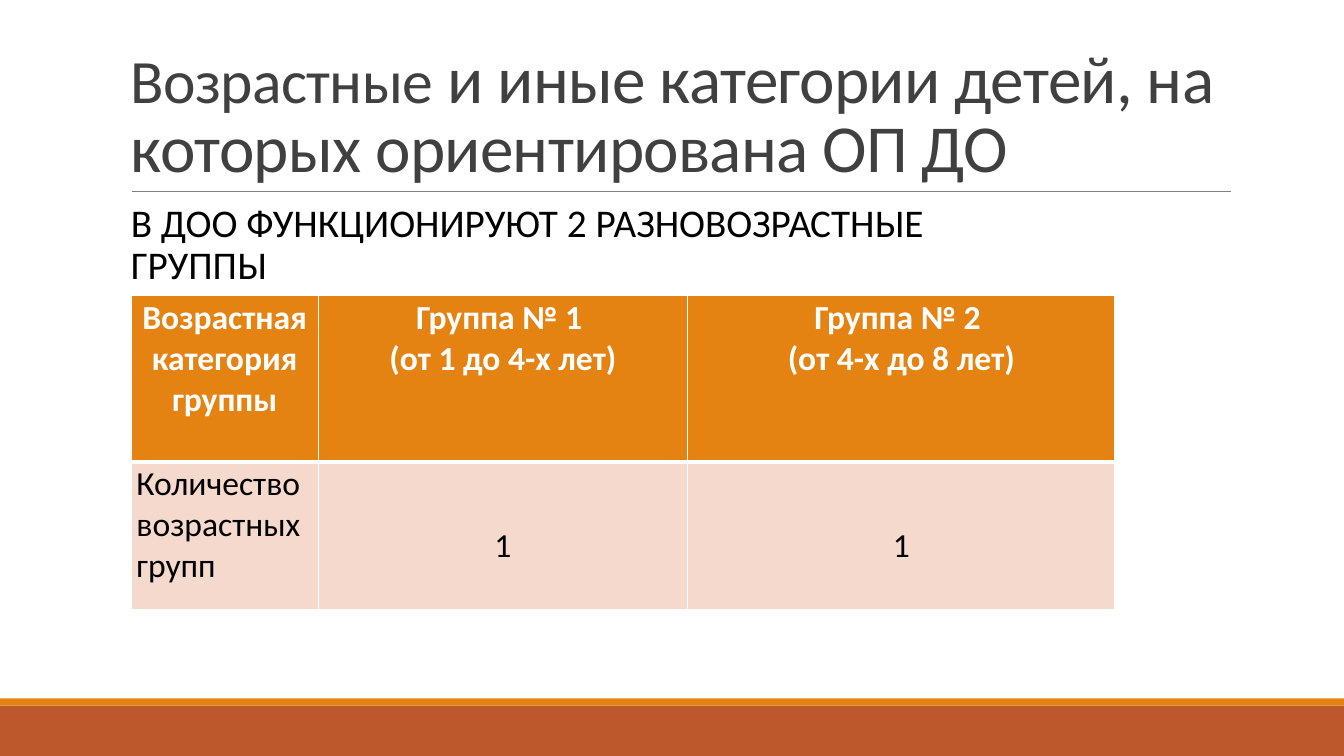
from lxml import etree
from pptx import Presentation
from pptx import util as u
from pptx.dml.color import RGBColor
from pptx.enum import shapes, text
from pptx.oxml.ns import qn

PX = 9525  # 96 px to the inch
COLORS = {"rust": "BD582C", "orange": "E48312", "gray": "808080", "title": "404040",
          "black": "000000", "white": "FFFFFF", "peach": "F5D9CC"}


def box(*lengths):
    return [n * PX for n in lengths]


def add_run(p, words, size, color, bold=False):
    r = p.add_run()
    r.text = words
    for name, value in {"name": "Calibri", "size": u.Pt(size), "bold": bold}.items():
        setattr(r.font, name, value)
    r.font.color.rgb = RGBColor.from_string(COLORS[color])
    return r


prs = Presentation()
prs.slide_width, prs.slide_height = box(1280, 720)
s = prs.slides.add_slide(prs.slide_layouts[1])

# Footer bands and title rule
for color, top, height in (("rust", 672, 48), ("orange", 665, 7)):
    sp = s.shapes.add_shape(shapes.MSO_SHAPE.RECTANGLE, *box(0, top, 1280, height))
    sp.shadow.inherit = False
    sp.fill.solid()
    sp.fill.fore_color.rgb = RGBColor.from_string(COLORS[color])
    sp.line.fill.background()
rule = s.shapes.add_connector(shapes.MSO_CONNECTOR.STRAIGHT, *box(126, 182, 1172, 182))
rule.line.color.rgb = RGBColor.from_string(COLORS["gray"])
rule.line.width = u.Pt(0.5)
etree.SubElement(rule._element.spPr, qn("a:effectLst"))

# Title and lead line
title, body = s.placeholders
for sp, place, anchor, spacing in (
        (title, (115, 30, 1056, 152), text.MSO_ANCHOR.BOTTOM, 0.85),
        (body, (115, 206, 878, 56), text.MSO_ANCHOR.MIDDLE, 0.9)):
    sp.left, sp.top, sp.width, sp.height = box(*place)
    tf = sp.text_frame
    for name, value in {"vertical_anchor": anchor, "word_wrap": True,
                        "auto_size": text.MSO_AUTO_SIZE.NONE}.items():
        setattr(tf, name, value)
    tf.paragraphs[0].alignment = text.PP_ALIGN.LEFT
    tf.paragraphs[0].line_spacing = spacing

p = title.text_frame.paragraphs[0]
for words, size in (("Возрастные", 44),
                    (" и иные категории детей, на которых ориентирована ОП ДО", 48)):
    r = add_run(p, words, size, "title")
    r._r.get_or_add_rPr().set("spc", "-50")

p = body.text_frame.paragraphs[0]
p.space_before, p.space_after = u.Pt(12), u.Pt(2)
pPr = p._p.get_or_add_pPr()
pPr.set("marL", "0")
pPr.set("indent", "0")
etree.SubElement(pPr, qn("a:buNone"))
add_run(p, "В ДОО ФУНКЦИОНИРУЮТ 2 РАЗНОВОЗРАСТНЫЕ ГРУППЫ", 28, "black")

# Age group table
rows = [["Возрастная категория группы", "Группа № 1 \n(от 1 до 4-х лет)",
         "Группа № 2 \n(от 4-х до 8 лет)"],
        ["Количество возрастных групп", "1", "1"]]
table = s.shapes.add_table(2, 3, *box(125, 281, 937, 300)).table
for column, width in zip(table.columns, (178, 352, 407)):
    column.width = width * PX
for row, height in zip(table.rows, (159, 141)):
    row.height = height * PX

for i, row in enumerate(rows):
    header = i == 0
    for j, words in enumerate(row):
        cell = table.cell(i, j)
        for side, inset in {"left": 5, "right": 5, "top": 2, "bottom": 2}.items():
            setattr(cell, f"margin_{side}", inset * PX)
        tf = cell.text_frame
        for k, line in enumerate(words.split("\n")):
            p = tf.add_paragraph() if k else tf.paragraphs[0]
            p.alignment = text.PP_ALIGN.CENTER if header or j else text.PP_ALIGN.LEFT
            if not header and j:
                p.line_spacing = 2.5
            add_run(p, line, 24, "white" if header else "black", header)
        tcPr = cell._tc.get_or_add_tcPr()
        for side in "LRTB":
            thick = (header and side == "B") or (not header and side == "T")
            ln = etree.SubElement(tcPr, qn(f"a:ln{side}"), w=str(u.Pt(3 if thick else 1)))
            fill = etree.SubElement(ln, qn("a:solidFill"))
            etree.SubElement(fill, qn("a:srgbClr"), val=COLORS["white"])
        cell.fill.solid()
        cell.fill.fore_color.rgb = RGBColor.from_string(COLORS["orange" if header else "peach"])

prs.save("out.pptx")
